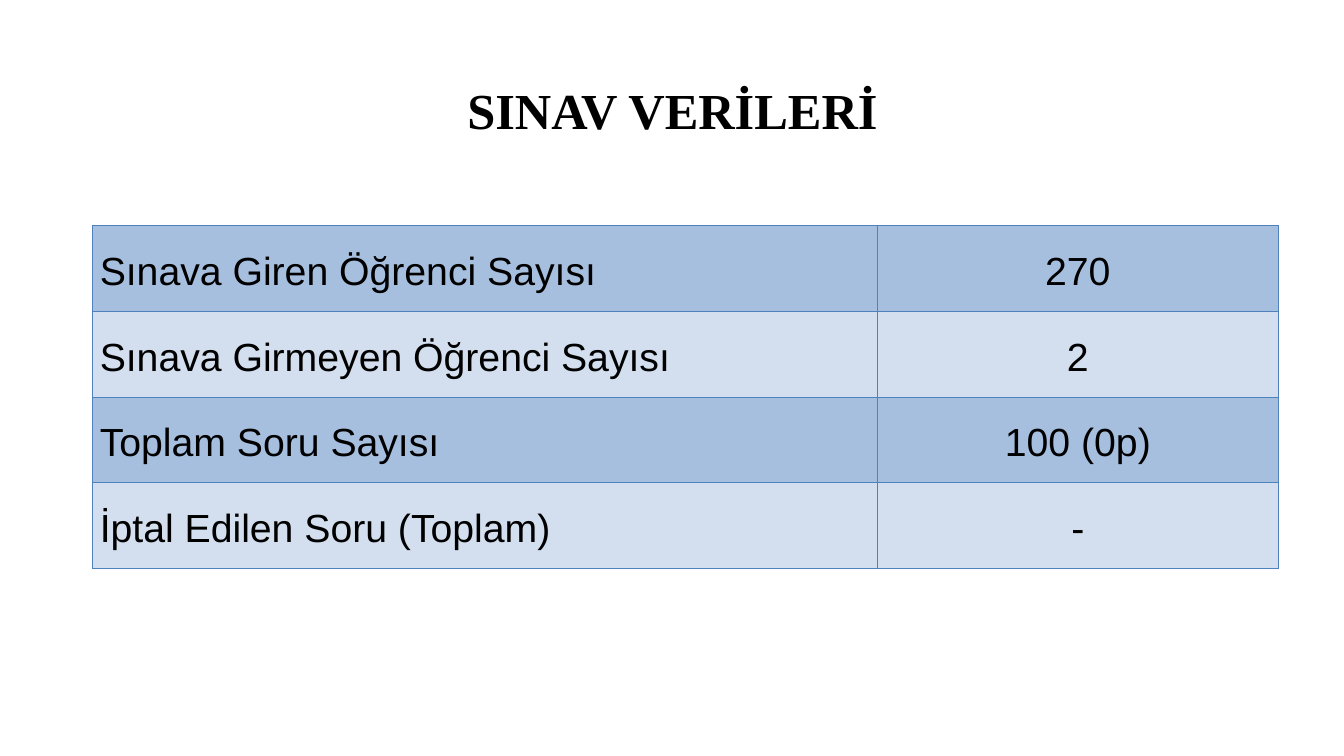
from lxml import etree
from pptx import Presentation, util as u
from pptx.dml import color
from pptx.enum import text
from pptx.oxml import ns

CENTER, LEFT = text.PP_ALIGN.CENTER, text.PP_ALIGN.LEFT
MIDDLE = text.MSO_ANCHOR.MIDDLE


def rgb(value):
    return color.RGBColor.from_string(value)


class Deck:
    ink = "000000"
    border = "4F81BD"
    bands = ("A7BFDE", "D3DFEE")
    title_font = {"name": "Times New Roman", "size": u.Pt(36), "bold": True}
    cell_font = {"name": "Arial", "size": u.Pt(28), "bold": False}
    cell_format = {
        "vertical_anchor": MIDDLE,
        "margin_left": u.Inches(0.07),
        "margin_right": u.Inches(0.07),
        "margin_top": 0,
        "margin_bottom": 0,
    }

    def __init__(self, width, height):
        self.prs = Presentation()
        self.prs.slide_width = u.Inches(width)
        self.prs.slide_height = u.Inches(height)
        self.s = self.prs.slides.add_slide(self.prs.slide_layouts[6])

    def apply(self, target, values):
        for name, value in values.items():
            setattr(target, name, value)

    def add_words(self, tf, words, font, align, spacing):
        p = tf.paragraphs[0]
        self.apply(p, {"alignment": align, "line_spacing": spacing})
        r = p.add_run()
        r.text = words
        self.apply(r.font, font)
        r.font.color.rgb = rgb(self.ink)

    def title(self, words, left, top, width, height):
        sp = self.s.shapes.add_textbox(*map(u.Inches, (left, top, width, height)))
        tf = sp.text_frame
        self.apply(tf, {"word_wrap": True, "vertical_anchor": MIDDLE})
        self.add_words(tf, words, self.title_font, CENTER, 0.9)

    def outline(self, cell):
        props = cell._tc.get_or_add_tcPr()
        for side in ("lnL", "lnR", "lnT", "lnB"):
            line = etree.SubElement(props, ns.qn(f"a:{side}"), w=str(u.Pt(1)))
            fill = etree.SubElement(line, ns.qn("a:solidFill"))
            etree.SubElement(fill, ns.qn("a:srgbClr"), val=self.border)

    def table(self, rows, left, top, widths, row_height):
        size = (left, top, sum(widths), row_height * len(rows))
        frame = self.s.shapes.add_table(len(rows), len(widths), *map(u.Inches, size))
        table = frame.table
        self.apply(table, {"first_row": False, "horz_banding": False})
        for column, width in zip(table.columns, widths):
            column.width = u.Inches(width)
        for i, row in enumerate(rows):
            table.rows[i].height = u.Inches(row_height)
            for j, (words, align) in enumerate(zip(row, (LEFT, CENTER))):
                cell = table.cell(i, j)
                self.apply(cell, self.cell_format)
                self.outline(cell)
                cell.fill.solid()
                cell.fill.fore_color.rgb = rgb(self.bands[i % 2])
                self.add_words(cell.text_frame, words, self.cell_font, align, 1.15)


def main():
    deck = Deck(13.33, 7.5)
    deck.title("SINAV VERİLERİ", 0.92, 0.4, 11.5, 1.45)
    exam_data = [
        ("Sınava Giren Öğrenci Sayısı", "270"),
        ("Sınava Girmeyen Öğrenci Sayısı", "2"),
        ("Toplam Soru Sayısı", "100 (0p)"),
        ("İptal Edilen Soru (Toplam)", "-"),
    ]
    deck.table(exam_data, 0.92, 2.24, (7.78, 3.98), 0.85)
    deck.prs.save("out.pptx")


if __name__ == "__main__":
    main()
